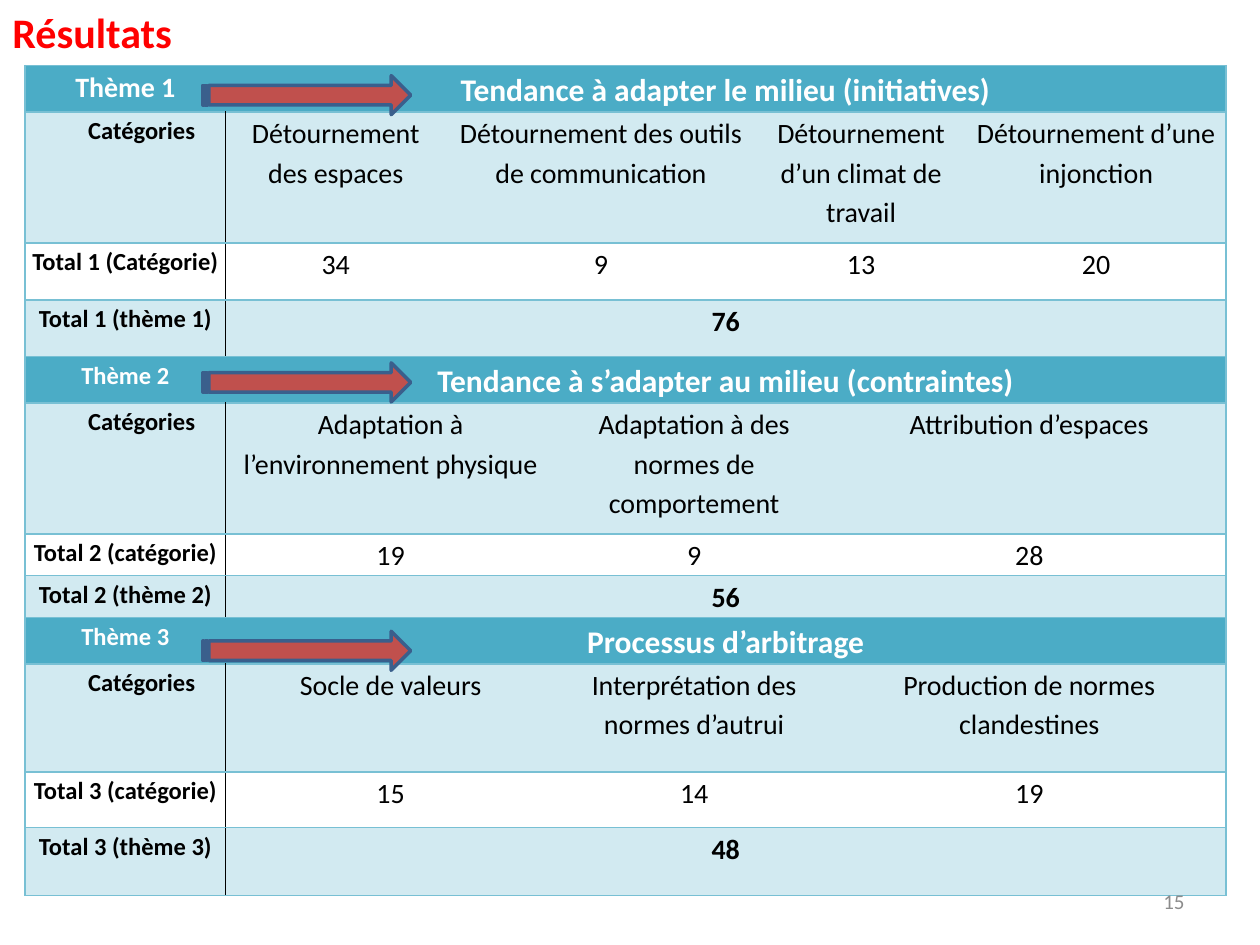
from itertools import accumulate
from lxml.etree import SubElement
from pptx import Presentation
from pptx.dml.color import RGBColor
from pptx.enum.shapes import MSO_SHAPE
from pptx.enum.text import MSO_ANCHOR, MSO_AUTO_SIZE, PP_ALIGN
from pptx.oxml.ns import qn
from pptx.util import Inches, Pt

FONT = "Calibri"
WHITE = RGBColor(0xFF, 0xFF, 0xFF)
BLACK = RGBColor(0, 0, 0)
RED = RGBColor(0xFF, 0, 0)
GREY = RGBColor(0x8C, 0x8C, 0x8C)
TEAL = RGBColor(0x4B, 0xAC, 0xC6)
PALE = RGBColor(0xD2, 0xEA, 0xF1)
RULE = RGBColor(0x78, 0xC0, 0xD4)
BRICK = RGBColor(0xC0, 0x50, 0x4D)
NAVY = RGBColor(0x3A, 0x5F, 0x8C)

TITLE = "Résultats"
PAGE = "15"
THEMES = [
    {"label": "Thème 1", "label_size": 16,
     "trend": "Tendance à adapter le milieu (initiatives)",
     "categories": [("Détournement des espaces", "34"),
                    ("Détournement des outils de communication", "9"),
                    ("Détournement d’un climat de travail", "13"),
                    ("Détournement d’une injonction", "20")],
     "totals": ("Total 1 (Catégorie)", "Total 1 (thème 1)", "76"),
     "starts": (1, 2, 4, 6), "heights": (0.37, 1.04, 0.45, 0.45), "arrow_drop": 0.08},
    {"label": "Thème 2", "label_size": 14,
     "trend": "Tendance à s’adapter au milieu (contraintes)",
     "categories": [("Adaptation à l’environnement physique", "19"),
                    ("Adaptation à des normes de comportement", "9"),
                    ("Attribution d’espaces", "28")],
     "totals": ("Total 2 (catégorie)", "Total 2 (thème 2)", "56"),
     "starts": (1, 3, 5), "heights": (0.37, 1.04, 0.33, 0.33), "arrow_drop": 0.05},
    {"label": "Thème 3", "label_size": 14,
     "trend": "Processus d’arbitrage",
     "categories": [("Socle de valeurs", "15"),
                    ("Interprétation des normes d’autrui", "14"),
                    ("Production de normes clandestines", "19")],
     "totals": ("Total 3 (catégorie)", "Total 3 (thème 3)", "48"),
     "starts": (1, 3, 5), "heights": (0.37, 0.86, 0.44, 0.54), "arrow_drop": 0.11},
]
COLUMNS = (1.59, 1.75, 0.87, 1.59, 0.61, 1.06, 2.06)
TABLE_LEFT, TABLE_TOP = 0.2, 0.52
CATEGORY_INDENT = 0.26
ARROW_LEFT, ARROW_WIDTH, ARROW_HEIGHT = 1.61, 1.65, 0.31


def style_text(paragraph, size, color, bold=False):
    for run in paragraph.runs:
        run.font.name = FONT
        run.font.size = Pt(size)
        run.font.bold = bold
        run.font.color.rgb = color


def set_borders(cell, left, right):
    properties = cell._tc.get_or_add_tcPr()
    sides = {"L": left, "R": right, "T": RULE, "B": RULE}
    for position, (side, color) in enumerate(sides.items()):
        line = SubElement(properties, qn(f"a:ln{side}"), w=str(Pt(1)))
        if color is None:
            SubElement(line, qn("a:noFill"))
        else:
            fill = SubElement(line, qn("a:solidFill"))
            SubElement(fill, qn("a:srgbClr"), val=str(color))
        properties.insert(position, line)


def put_cell(table, row, start, end, text, size, fill, color=BLACK, bold=False, indent=0):
    last = len(COLUMNS) - 1
    divider = None if fill == TEAL else BLACK
    edges = {0: RULE, 1: divider, last + 1: RULE}
    for column in range(start, end + 1):
        part = table.cell(row, column)
        part.fill.solid()
        part.fill.fore_color.rgb = fill
        right = edges.get(end + 1) if column in (start, end) else None
        set_borders(part, edges.get(column), right)
    cell = table.cell(row, start)
    if end > start:
        cell.merge(table.cell(row, end))
    cell.margin_left = Inches(0.03 + indent)
    cell.margin_right = Inches(0.03)
    cell.margin_top = cell.margin_bottom = 0
    cell.text_frame.text = text
    paragraph = cell.text_frame.paragraphs[0]
    paragraph.alignment = PP_ALIGN.CENTER
    paragraph.line_spacing = 1.15
    style_text(paragraph, size, color, bold)


def fill_theme(table, top_row, theme):
    last = len(COLUMNS) - 1
    category_total, theme_total, total = theme["totals"]
    put_cell(table, top_row, 0, 0, theme["label"], theme["label_size"], TEAL, WHITE, True)
    put_cell(table, top_row, 1, last, theme["trend"], 18, TEAL, WHITE, True)
    put_cell(table, top_row + 1, 0, 0, "Catégories", 14, PALE, bold=True, indent=CATEGORY_INDENT)
    put_cell(table, top_row + 2, 0, 0, category_total, 14, WHITE, bold=True)
    put_cell(table, top_row + 3, 0, 0, theme_total, 14, PALE, bold=True)
    put_cell(table, top_row + 3, 1, last, total, 16, PALE, bold=True)
    starts = theme["starts"]
    ends = [start - 1 for start in starts[1:]] + [last]
    for (category, count), start, end in zip(theme["categories"], starts, ends):
        put_cell(table, top_row + 1, start, end, category, 16, PALE)
        put_cell(table, top_row + 2, start, end, count, 16, WHITE)


def add_text(slide, box, text, size, color, bold=False):
    frame = slide.shapes.add_textbox(*map(Inches, box)).text_frame
    frame.text = text
    style_text(frame.paragraphs[0], size, color, bold)
    return frame


def add_arrow(slide, top):
    arrow = slide.shapes.add_shape(
        MSO_SHAPE.STRIPED_RIGHT_ARROW,
        *map(Inches, (ARROW_LEFT, top, ARROW_WIDTH, ARROW_HEIGHT)))
    arrow.shadow.inherit = False
    arrow.fill.solid()
    arrow.fill.fore_color.rgb = BRICK
    arrow.line.color.rgb = NAVY
    arrow.line.width = Pt(2)


def main():
    deck = Presentation()
    deck.slide_width, deck.slide_height = Inches(10), Inches(7.5)
    slide = deck.slides.add_slide(deck.slide_layouts[6])

    heights = [height for theme in THEMES for height in theme["heights"]]
    table = slide.shapes.add_table(
        len(heights), len(COLUMNS),
        *map(Inches, (TABLE_LEFT, TABLE_TOP, sum(COLUMNS), sum(heights)))).table
    table.first_row = table.horz_banding = False
    for column, width in zip(table.columns, COLUMNS):
        column.width = Inches(width)
    for row, height in zip(table.rows, heights):
        row.height = Inches(height)
    for index, theme in enumerate(THEMES):
        fill_theme(table, index * len(theme["heights"]), theme)

    title = add_text(slide, (0, 0, 1.48, 0.5), TITLE, 24, RED, True)
    title.word_wrap = False
    title.auto_size = MSO_AUTO_SIZE.SHAPE_TO_FIT_TEXT
    page = add_text(slide, (7.17, 6.95, 2.33, 0.4), PAGE, 12, GREY)
    page.word_wrap = True
    page.vertical_anchor = MSO_ANCHOR.MIDDLE
    page.paragraphs[0].alignment = PP_ALIGN.RIGHT

    theme_tops = accumulate((sum(theme["heights"]) for theme in THEMES), initial=TABLE_TOP)
    for theme, top in zip(THEMES, theme_tops):
        add_arrow(slide, top + theme["arrow_drop"])

    deck.save("out.pptx")


if __name__ == "__main__":
    main()
